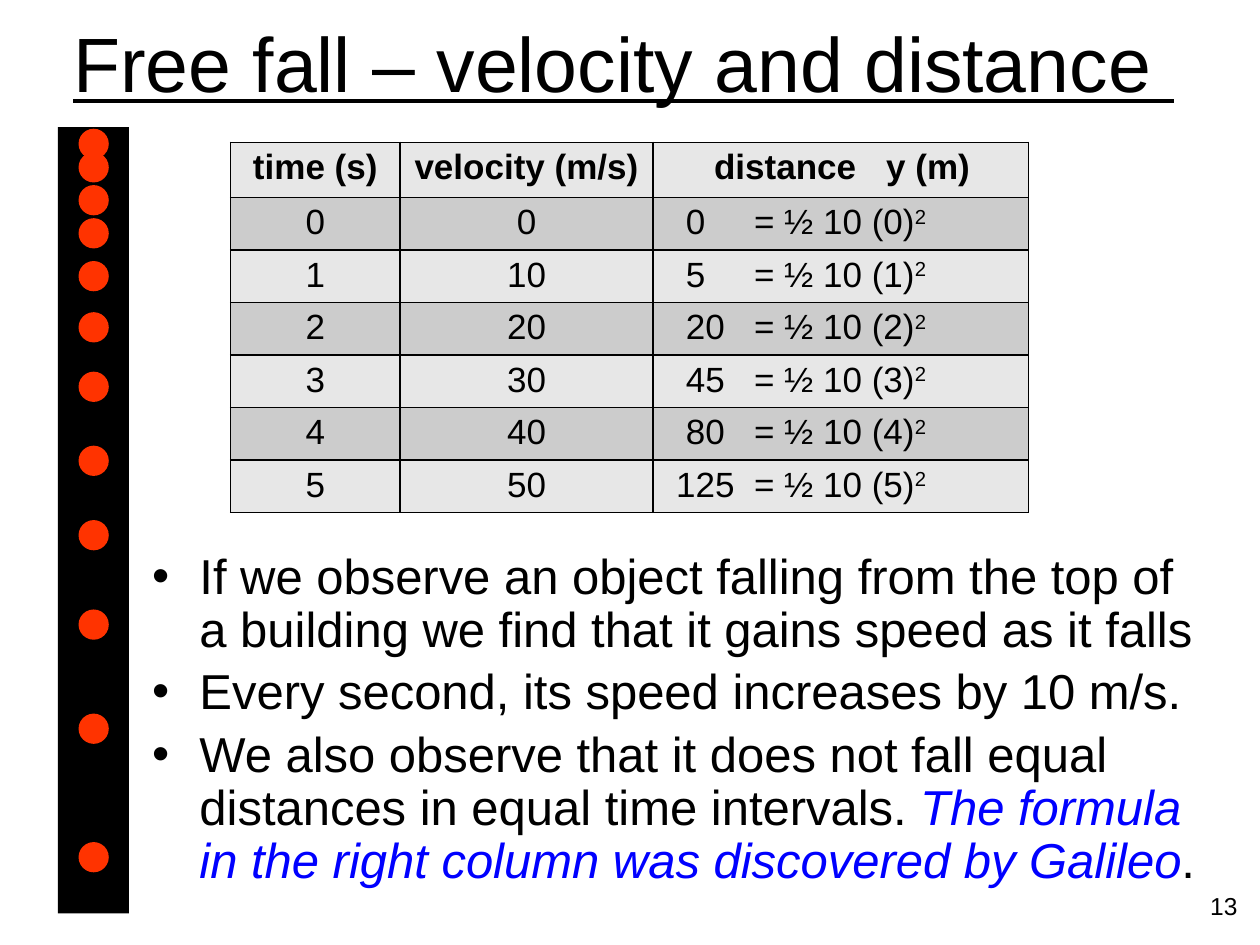
from lxml import etree
from pptx import Presentation
from pptx import util as u
from pptx.dml.color import RGBColor
from pptx.enum import shapes, text
from pptx.oxml import ns

BLACK = RGBColor(0x00, 0x00, 0x00)
BLUE = RGBColor(0x00, 0x00, 0xFF)
ORANGE = RGBColor(0xFF, 0x33, 0x00)
LIGHT = RGBColor(0xE7, 0xE7, 0xE7)
GREY = RGBColor(0xCC, 0xCC, 0xCC)
CENTER, RIGHT = text.PP_ALIGN.CENTER, text.PP_ALIGN.RIGHT


def add_node(parent, tag, **attributes):
    node = etree.SubElement(parent, ns.qn(tag))
    for name, value in attributes.items():
        node.set(name, str(value))
    return node


def add_span(para, words, size=20, color=BLACK, bold=False, italic=False,
             underline=False, raised=False):
    span = para.add_run()
    span.text = words
    font = span.font
    font.name, font.size = "Arial", u.Pt(size)
    font.bold, font.italic, font.underline = bold, italic, underline
    font.color.rgb = color
    if raised:
        span.font._element.set("baseline", "30000")


class SlideBuilder:
    def __init__(self, slide):
        self.slide = slide

    def title(self, words, left, top, width, height):
        box = self.slide.shapes.title
        box.left, box.top = u.Pt(left), u.Pt(top)
        box.width, box.height = u.Pt(width), u.Pt(height)
        box.text_frame.vertical_anchor = text.MSO_ANCHOR.MIDDLE
        para = box.text_frame.paragraphs[0]
        para.alignment = CENTER
        add_span(para, words, size=44, underline=True)

    def text_box(self, left, top, width, height):
        box = self.slide.shapes.add_textbox(
            u.Pt(left), u.Pt(top), u.Pt(width), u.Pt(height))
        box.text_frame.word_wrap = True
        return box.text_frame

    def bullets(self, items, left, top, width, height):
        frame = self.text_box(left, top, width, height)
        for index, spans in enumerate(items):
            para = frame.add_paragraph() if index else frame.paragraphs[0]
            para.line_spacing = 0.9
            para.space_before = u.Pt(5.6)
            props = para._p.get_or_add_pPr()
            props.set("marL", str(u.Pt(27)))
            props.set("indent", str(u.Pt(-27)))
            add_node(props, "a:buFont", typeface="Arial")
            add_node(props, "a:buChar", char="•")
            for number, words in enumerate(spans):
                if number:
                    para_break = words.startswith("\n")
                    if para_break:
                        para.add_line_break()
                accent = words.startswith("The formula")
                add_span(para, words.lstrip("\n"), size=28, italic=accent,
                         color=BLUE if accent else BLACK)

    def shape(self, group, kind, left, top, width, height, color):
        item = group.shapes.add_shape(
            kind, u.Pt(left), u.Pt(top), u.Pt(width), u.Pt(height))
        item.shadow.inherit = False
        item.fill.solid()
        item.fill.fore_color.rgb = color
        item.line.fill.background()

    def table(self, rows, left, top, widths, heights):
        table = self.slide.shapes.add_table(
            len(rows), len(widths), u.Pt(left), u.Pt(top),
            u.Pt(sum(widths)), u.Pt(sum(heights))).table
        for column, width in zip(table.columns, widths):
            column.width = u.Pt(width)
        for row, height in zip(table.rows, heights):
            row.height = u.Pt(height)
        for r, values in enumerate(rows):
            for c, words in enumerate(values):
                self.cell(table.cell(r, c), words, header=r == 0,
                          color=GREY if r % 2 else LIGHT)

    def cell(self, cell, words, header, color):
        cell.margin_top = cell.margin_bottom = u.Pt(3)
        para = cell.text_frame.paragraphs[0]
        if "\t" in words:
            # A tab stop lines up the second part of the cell
            margin, stop = (34.9, 98.3) if header else (18.8, 38.9)
            if words.startswith("125"):
                margin, stop = margin - 5.6, stop + 5.6
            cell.margin_left = u.Pt(margin)
            tabs = add_node(para._p.get_or_add_pPr(), "a:tabLst")
            add_node(tabs, "a:tab", pos=u.Pt(stop), algn="l")
        else:
            para.alignment = CENTER
        base, caret, power = words.partition("^")
        add_span(para, base, bold=header)
        if caret:
            add_span(para, power, raised=True)
        props = cell._tc.get_or_add_tcPr()
        for side in "LRTB":
            line = add_node(props, f"a:ln{side}", w=u.Pt(1))
            fill = add_node(line, "a:solidFill")
            add_node(fill, "a:srgbClr", val=BLACK)
        cell.fill.solid()
        cell.fill.fore_color.rgb = color


def main():
    deck = Presentation()
    deck.slide_width, deck.slide_height = u.Pt(720), u.Pt(540)
    page = deck.slides.add_slide(deck.slide_layouts[5])
    builder = SlideBuilder(page)

    builder.title("Free fall – velocity and distance ", 32.4, 0, 648, 70.5)

    # Observations
    builder.bullets([
        ["If we observe an object falling from the top of a building "
         "we find that it gains speed as it falls"],
        ["Every second, its speed increases by 10 m/s."],
        ["We also observe that it does not fall equal",
         "\ndistances in equal time intervals. ",
         "The formula in the right column was discovered by Galileo", "."],
    ], 79.9, 311.8, 617, 211.7)

    # Slide number
    para = builder.text_box(676, 505.4, 38.2, 26.6).paragraphs[0]
    para.alignment = RIGHT
    add_span(para, "13", size=14)

    # Velocity and distance for each second
    rows = [["time (s)", "velocity (m/s)", "distance\ty (m)"]]
    for time in range(6):
        rows.append([str(time), str(10 * time),
                     f"{5 * time ** 2}\t= ½ 10 ({time})^2"])
    builder.table(rows, 131.8, 81.4, [96.8, 144.6, 214.6],
                  [31.6] + [29.6] * 6)

    # Falling ball on a dark strip
    strip = page.shapes.add_group_shape()
    builder.shape(strip, shapes.MSO_SHAPE.RECTANGLE,
                  33.1, 72.7, 40.5, 449.3, BLACK)
    for top in (73.6, 87, 105.8, 124.7, 149.2, 178.4,
                212.4, 254.7, 297.2, 348.3, 407.8, 481.2):
        builder.shape(strip, shapes.MSO_SHAPE.OVAL,
                      44.9, top, 17.3, 17.3, ORANGE)

    deck.save("out.pptx")


if __name__ == "__main__":
    main()
